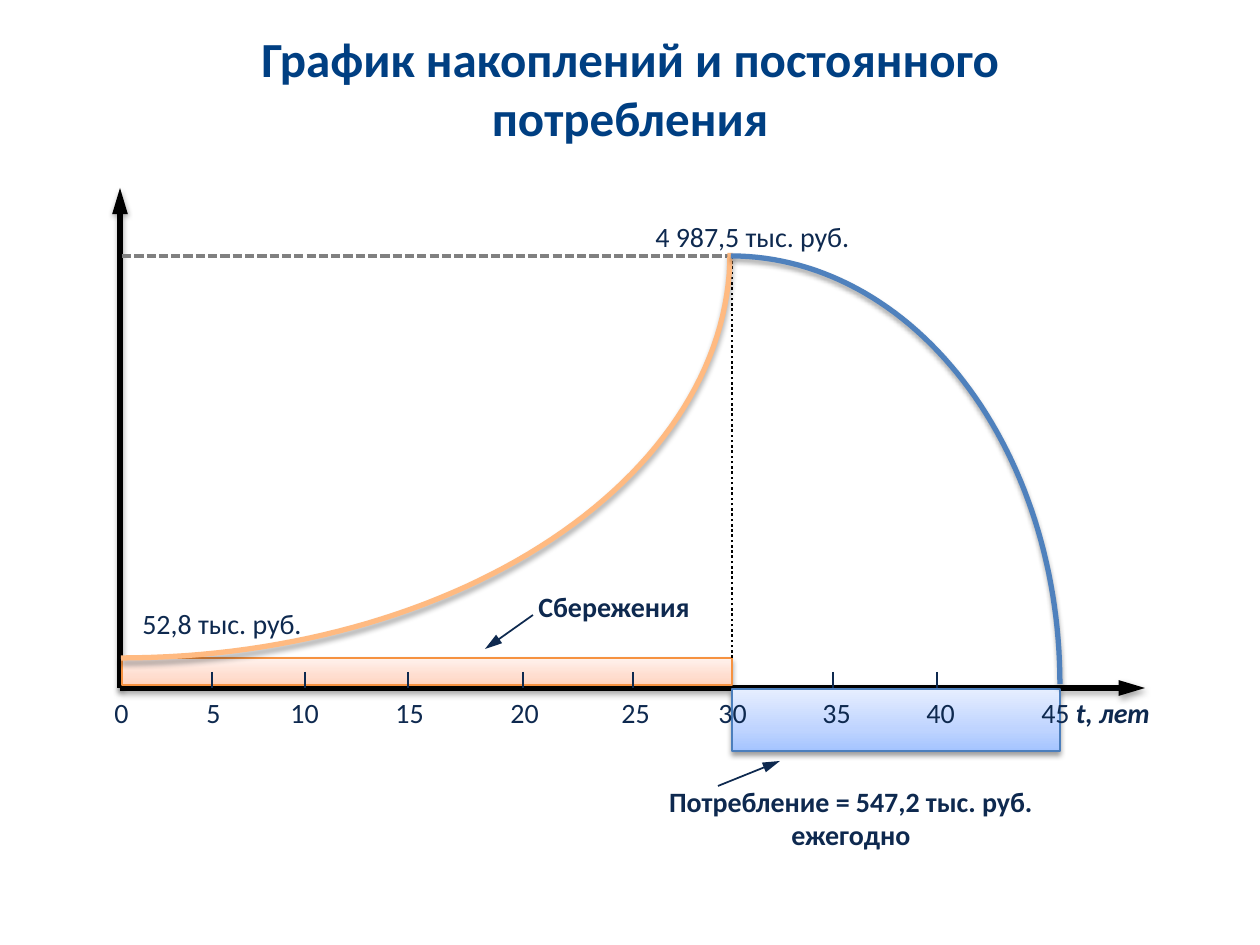
import math

import pptx
import pptx.dml.color
import pptx.enum.dml
import pptx.enum.shapes
import pptx.enum.text
import pptx.oxml
import pptx.oxml.ns
import pptx.util

RGB = pptx.dml.color.RGBColor
DASH = pptx.enum.dml.MSO_LINE
ALIGN = pptx.enum.text.PP_ALIGN
TITLE_BLUE = RGB(0x00, 0x3F, 0x82)
NAVY = RGB(0x0E, 0x29, 0x4F)
BLACK = RGB(0, 0, 0)
GRAY = RGB(0x80, 0x80, 0x80)
ORANGE_EDGE = RGB(0xF6, 0x92, 0x40)
BLUE_EDGE = RGB(0x4B, 0x7E, 0xBC)
ORANGE_CURVE = RGB(0xFF, 0xBA, 0x81)
BLUE_CURVE = RGB(0x4F, 0x81, 0xBD)
ORANGE_STOPS = ((0, RGB(0xFF, 0xD2, 0xBD)), (35, RGB(0xFF, 0xDE, 0xD0)), (100, RGB(0xFF, 0xF2, 0xED)))
BLUE_STOPS = ((0, RGB(0xA4, 0xC4, 0xFF)), (35, RGB(0xBF, 0xD4, 0xFF)), (100, RGB(0xE6, 0xEE, 0xFF)))

FONT = "Calibri"
SCALE = 914400 / 126
AXIS_X, AXIS_Y = 120, 688
TICK = 16
LABEL_TOP, LABEL_HEIGHT = 689, 47
CURVE_STEPS = 60

TITLE = "График накоплений и постоянного потребления"
AXES = [(AXIS_X, 188), (1145, AXIS_Y)]
TICKS = [212, 305, 408, 523, 633, 833, 937]
BARS = [
    ((122, 658, 610, 27), ORANGE_STOPS, ORANGE_EDGE),
    ((732, 689, 328, 62), BLUE_STOPS, BLUE_EDGE),
]
GUIDES = [
    ((732, 658), (732, 258), BLACK, 1.5, DASH.ROUND_DOT),
    ((122, 256), (731, 256), GRAY, 1.75, DASH.SQUARE_DOT),
]
CURVES = [
    ((121, 253), (609, 405), 90, 0, ORANGE_CURVE),
    ((731, 684), (329, 428), -90, 0, BLUE_CURVE),
]
POINTERS = [((533, 615), (485, 649)), ((718, 786), (780, 761))]
NOTES = [
    ((130, 600, 227, 47), "52,8 тыс. руб.", False, ALIGN.LEFT),
    ((643, 213, 295, 47), "4 987,5 тыс. руб.", False, ALIGN.LEFT),
    ((526, 583, 208, 47), "Сбережения", True, ALIGN.LEFT),
    ((604, 778, 494, 81), "Потребление = 547,2 тыс. руб. ежегодно", True, ALIGN.CENTER),
]
YEARS = [
    ("0", 102, 42), ("5", 194, 42), ("10", 278, 57), ("15", 383, 57), ("20", 498, 57),
    ("25", 609, 57), ("30", 706, 57), ("35", 810, 57), ("40", 914, 57), ("45 ", 1029, 149),
]
AXIS_NAME = "t, лет"


def emu(px):
    return round(px * SCALE)


def add_effects(item, opacity=None):
    shadow = "" if opacity is None else (
        '<a:outerShdw blurRad="39370" dist="22860" dir="5400000" rotWithShape="0">'
        f'<a:srgbClr val="000000"><a:alpha val="{opacity * 1000}"/></a:srgbClr></a:outerShdw>')
    item._element.spPr.append(pptx.oxml.parse_xml(
        f'<a:effectLst {pptx.oxml.ns.nsdecls("a")}>{shadow}</a:effectLst>'))


def set_line(item, color, width):
    item.line.color.rgb = color
    item.line.width = pptx.util.Pt(width)


def add_line(page, start, end, color, width, dash=None, arrow=False, opacity=None):
    line = page.shapes.add_connector(
        pptx.enum.shapes.MSO_CONNECTOR.STRAIGHT, *map(emu, start + end))
    set_line(line, color, width)
    if dash is not None:
        line.line.dash_style = dash
    if arrow:
        line.line._get_or_add_ln().append(pptx.oxml.parse_xml(
            f'<a:tailEnd {pptx.oxml.ns.nsdecls("a")} type="triangle" len="lg"/>'))
    add_effects(line, opacity)


def add_bar(page, place, stops, edge):
    bar = page.shapes.add_shape(
        pptx.enum.shapes.MSO_SHAPE.RECTANGLE, *map(emu, place))
    bar.fill.gradient()
    bar.fill.gradient_angle = 90
    stop_list = bar._element.spPr.find(".//" + pptx.oxml.ns.qn("a:gsLst"))
    stop_list.clear()
    for position, color in stops:
        stop_list.append(pptx.oxml.parse_xml(
            f'<a:gs {pptx.oxml.ns.nsdecls("a")} pos="{position * 1000}">'
            f'<a:srgbClr val="{color}"/></a:gs>'))
    set_line(bar, edge, 0.75)
    add_effects(bar, 38)


def add_curve(page, center, radii, first, last, color):
    points = []
    for step in range(CURVE_STEPS + 1):
        angle = math.radians(first + (last - first) * step / CURVE_STEPS)
        points.append((emu(center[0] + radii[0] * math.cos(angle)),
                       emu(center[1] + radii[1] * math.sin(angle))))
    builder = page.shapes.build_freeform(*points[0], scale=1.0)
    builder.add_line_segments(points[1:], close=False)
    curve = builder.convert_to_shape()
    curve.fill.background()
    set_line(curve, color, 3)
    add_effects(curve, 35)


def add_span(para, text, size=16, color=NAVY, bold=False, italic=False):
    span = para.add_run()
    span.text = text
    span.font.name = FONT
    span.font.size = pptx.util.Pt(size)
    span.font.color.rgb = color
    span.font.bold = bold
    span.font.italic = italic


def add_text(page, place, align=ALIGN.LEFT, wrap=True):
    box = page.shapes.add_textbox(*map(emu, place))
    box.text_frame.word_wrap = wrap
    para = box.text_frame.paragraphs[0]
    para.alignment = align
    return box, para


def main():
    deck = pptx.Presentation()
    deck.slide_width, deck.slide_height = emu(1260), emu(945)
    page = deck.slides.add_slide(deck.slide_layouts[6])

    box, para = add_text(page, (133, 59, 994, 57), ALIGN.CENTER)
    box.text_frame.vertical_anchor = pptx.enum.text.MSO_ANCHOR.MIDDLE
    add_span(para, TITLE, 28, TITLE_BLUE, True)

    for tip in AXES:
        add_line(page, (AXIS_X, AXIS_Y), tip, BLACK, 3, arrow=True, opacity=35)
    for bar in BARS:
        add_bar(page, *bar)
    for x in TICKS:
        add_line(page, (x, AXIS_Y - TICK), (x, AXIS_Y), NAVY, 0.75)
    for guide in GUIDES:
        add_line(page, *guide)
    for curve in CURVES:
        add_curve(page, *curve)
    for start, end in POINTERS:
        add_line(page, start, end, NAVY, 1, arrow=True)
    for place, text, bold, align in NOTES:
        box, para = add_text(page, place, align)
        add_span(para, text, bold=bold)
    for text, left, width in YEARS:
        box, para = add_text(page, (left, LABEL_TOP, width, LABEL_HEIGHT), wrap=False)
        add_span(para, text)
    add_span(para, AXIS_NAME, bold=True, italic=True)

    deck.save("out.pptx")


if __name__ == "__main__":
    main()
